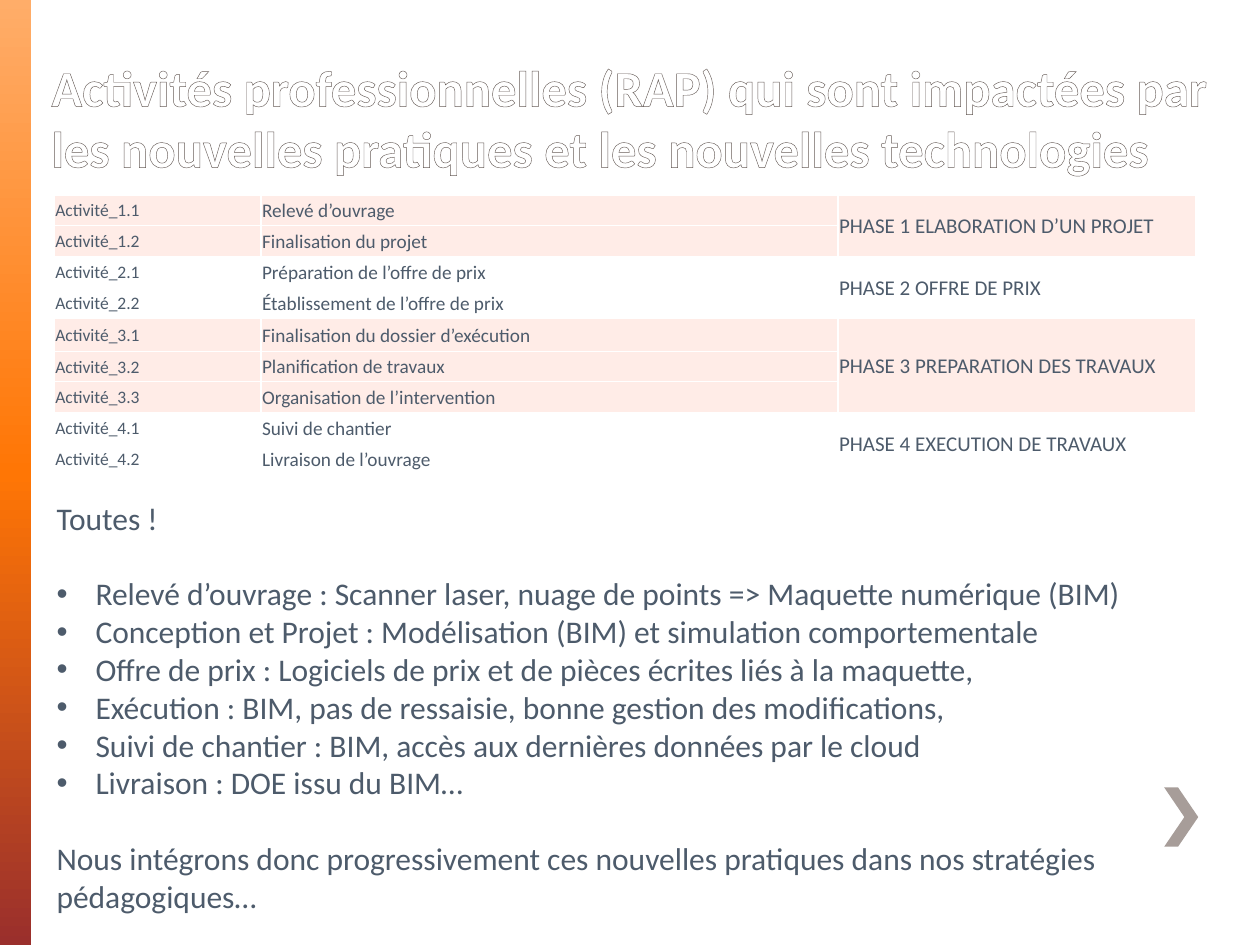
from copy import deepcopy

from lxml import etree
from pptx import Presentation
from pptx import util as u
from pptx.dml.color import RGBColor
from pptx.enum import shapes, text
from pptx.oxml.ns import qn

COLUMNS, ROWS = 100, 75
UNIT = u.Inches(10) // COLUMNS
FONT = "Calibri"
SLATE, WHITE, ROSE, TAUPE = "4D5B6B", "FFFFFF", "FFECE7", "A79D99"
TITLE = ("Activités professionnelles (RAP) qui sont impactées par "
         "les nouvelles pratiques et les nouvelles technologies")
PHASES = [
    ("PHASE 1 ELABORATION D’UN PROJET", ["Relevé d’ouvrage", "Finalisation du projet"]),
    ("PHASE 2 OFFRE DE PRIX",
     ["Préparation de l’offre de prix", "Établissement de l’offre de prix"]),
    ("PHASE 3 PREPARATION DES TRAVAUX",
     ["Finalisation du dossier d’exécution", "Planification de travaux",
      "Organisation de l’intervention"]),
    ("PHASE 4 EXECUTION DE TRAVAUX", ["Suivi de chantier", "Livraison de l’ouvrage"]),
]
PRACTICES = [
    "Relevé d’ouvrage : Scanner laser, nuage de points => Maquette numérique (BIM)",
    "Conception et Projet : Modélisation (BIM) et simulation comportementale",
    "Offre de prix : Logiciels de prix et de pièces écrites liés à la maquette,",
    "Exécution : BIM, pas de ressaisie, bonne gestion des modifications,",
    "Suivi de chantier : BIM, accès aux dernières données par le cloud",
    "Livraison : DOE issu du BIM…",
]
CONCLUSION = ("Nous intégrons donc progressivement ces nouvelles pratiques "
              "dans nos stratégies pédagogiques…")


def colour(value):
    return RGBColor.from_string(value)


def grid(*lengths):
    return [u.Emu(round(length * UNIT)) for length in lengths]


def add_line(parent, tag, value, width, index):
    line = etree.Element(qn(tag), w=str(u.Pt(width)))
    fill = etree.SubElement(line, qn("a:solidFill"))
    etree.SubElement(fill, qn("a:srgbClr"), val=value)
    parent.insert(index, line)


def add_span(para, words, size, value=SLATE, bold=False):
    span = para.add_run()
    span.text = words
    span.font.name = FONT
    span.font.size = u.Pt(size)
    span.font.bold = bold
    span.font.color.rgb = colour(value)
    return span


def add_box(page, area, anchor):
    frame = page.shapes.add_textbox(*grid(*area)).text_frame
    frame.word_wrap = True
    frame.vertical_anchor = anchor
    return frame


def add_gradient_bar(page, area, stops):
    bar = page.shapes.add_shape(shapes.MSO_SHAPE.RECTANGLE, *grid(*area))
    bar.shadow.inherit = False
    bar.line.fill.background()
    bar.fill.gradient()
    bar.fill.gradient_angle = 270
    stop_list = bar._element.spPr.find(".//" + qn("a:gsLst"))
    stop_list.append(deepcopy(stop_list[0]))
    for stop, (position, value) in zip(bar.fill.gradient_stops, stops):
        stop.position = position
        stop.color.rgb = colour(value)


def add_chevron(page, left, top, width, height, thickness):
    right, middle, bottom = left + width, top + height / 2, top + height
    points = [(left + thickness, top), (right, middle), (left + thickness, bottom),
              (left, bottom), (right - thickness, middle)]
    builder = page.shapes.build_freeform(*grid(left, top))
    builder.add_line_segments([grid(*point) for point in points])
    chevron = builder.convert_to_shape()
    chevron.shadow.inherit = False
    chevron.fill.solid()
    chevron.fill.fore_color.rgb = colour(TAUPE)
    chevron.line.fill.background()


def add_title(page):
    frame = add_box(page, (3.1, 2.1, 94.9, 12.5), text.MSO_ANCHOR.BOTTOM)
    span = add_span(frame.paragraphs[0], TITLE, 29, WHITE, True)
    add_line(span.font._element, "a:ln", "675D59", 1, 0)


def style_cell(cell, value):
    cell.vertical_anchor = text.MSO_ANCHOR.MIDDLE
    cell.margin_left = cell.margin_right = cell.margin_top = u.Inches(0.01)
    cell.margin_bottom = 0
    cell.fill.solid()
    cell.fill.fore_color.rgb = colour(value)
    for index, side in enumerate("LRTB"):
        add_line(cell._tc.get_or_add_tcPr(), f"a:ln{side}", WHITE, 1, index)


def add_phase_table(page):
    widths = grid(16.4, 45.8, 28.4)
    heights = grid(2.4, 2.5, 2.4, 2.5, 2.6, 2.4, 2.5, 2.4, 2.5)
    frame = page.shapes.add_table(len(heights), len(widths), *grid(4.3, 15.5, 90.6, 22))
    table = frame.table
    table.first_row = table.horz_banding = False
    for column, width in zip(table.columns, widths):
        column.width = width
    for row, height in zip(table.rows, heights):
        row.height = height
    first = 0
    for number, (phase, activities) in enumerate(PHASES, 1):
        for offset, activity in enumerate(activities):
            row = first + offset
            for column in range(len(widths)):
                style_cell(table.cell(row, column), ROSE if number % 2 else WHITE)
            code = f"Activité_{number}.{offset + 1}"
            add_span(table.cell(row, 0).text_frame.paragraphs[0], code, 10)
            add_span(table.cell(row, 1).text_frame.paragraphs[0], activity, 11)
        add_span(table.cell(first, 2).text_frame.paragraphs[0], phase, 12)
        table.cell(first, 2).merge(table.cell(row, 2))
        first += len(activities)


def add_bullet(para):
    properties = para._p.get_or_add_pPr()
    indent = u.Inches(0.31)
    properties.set("marL", str(indent))
    properties.set("indent", str(-indent))
    etree.SubElement(properties, qn("a:buFont"), typeface="Arial")
    etree.SubElement(properties, qn("a:buChar"), char="•")


def add_practices(page):
    frame = add_box(page, (3.5, 39.1, 94.5, 34.3), text.MSO_ANCHOR.TOP)
    gap = u.Pt(21.6)
    intro = frame.paragraphs[0]
    intro.space_after = gap
    add_span(intro, "Toutes !", 18)
    for practice in PRACTICES:
        para = frame.add_paragraph()
        add_bullet(para)
        add_span(para, practice, 18)
    ending = frame.add_paragraph()
    ending.space_before = gap
    add_span(ending, CONCLUSION, 18)


def main():
    deck = Presentation()
    deck.slide_width, deck.slide_height = grid(COLUMNS, ROWS)
    page = deck.slides.add_slide(deck.slide_layouts[6])
    add_gradient_bar(page, (0, 0, 2.5, ROWS),
                     [(0, "FFAD69"), (0.5, "FF7605"), (1, "9A2F2C")])
    add_chevron(page, 92.4, 62.5, 2.7, 4.7, 1.1)
    add_title(page)
    add_phase_table(page)
    add_practices(page)
    deck.save("out.pptx")


if __name__ == "__main__":
    main()
